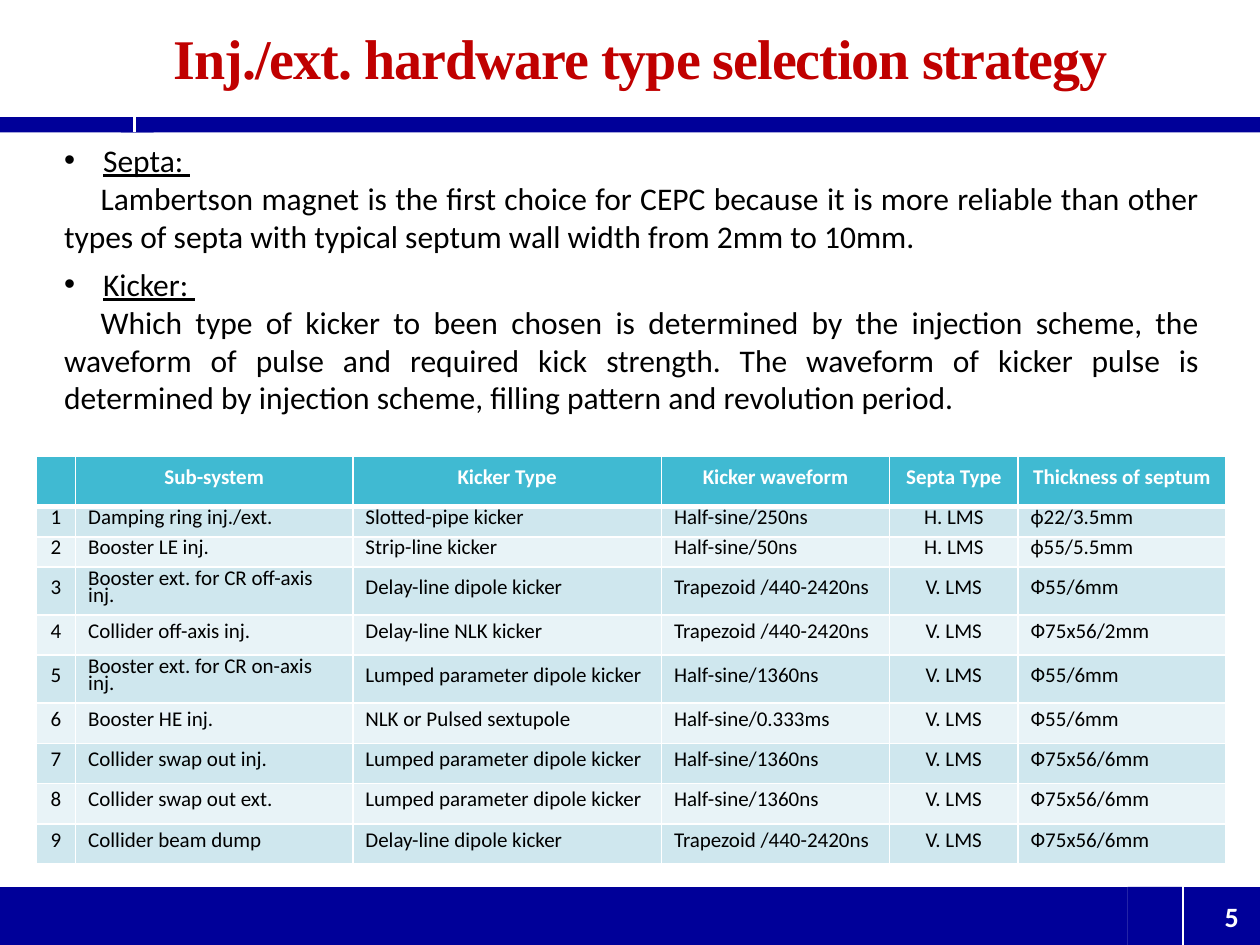
import pptx
import pptx.dml.color
import pptx.enum.shapes
import pptx.enum.text
import pptx.oxml
import pptx.oxml.ns
import pptx.util
from pptx.util import Inches

COLORS = {"navy": "000099", "white": "FFFFFF", "red": "C00000", "black": "000000",
          "header": "40BAD2", "odd": "CFE7EE", "even": "E8F3F7"}
ALIGN = pptx.enum.text.PP_ALIGN
ANCHOR = pptx.enum.text.MSO_ANCHOR
SHAPE = pptx.enum.shapes.MSO_SHAPE
TITLE_FONT = {"name": "Times New Roman", "size": pptx.util.Pt(32), "bold": True}
NUMBER_FONT = {"name": "Calibri", "size": pptx.util.Pt(16), "bold": True}
BODY_FONT = {"name": "Calibri", "size": pptx.util.Pt(18)}
TABLE_FONT = {"name": "Calibri", "size": pptx.util.Pt(12)}

BODY = [
    ("Septa: ", "Lambertson magnet is the first choice for CEPC because it is more reliable "
     "than other types of septa with typical septum wall width from 2mm to 10mm."),
    ("Kicker: ", "Which type of kicker to been chosen is determined by the injection scheme, "
     "the waveform of pulse and required kick strength. The waveform of kicker pulse is "
     "determined by injection scheme, filling pattern and revolution period."),
]
COLUMN_WIDTHS = [0.31, 2.2, 2.45, 1.81, 1.02, 1.65]
ROW_HEIGHTS = [0.36, 0.24, 0.24, 0.38, 0.32, 0.38, 0.32, 0.32, 0.32, 0.32]
CENTERED_COLUMNS = (0, 4)
HEADINGS = ["", "Sub-system", "Kicker Type", "Kicker waveform", "Septa Type",
            "Thickness of septum"]
SYSTEMS = [
    ("Damping ring inj./ext.", "Slotted-pipe kicker", "Half-sine/250ns", "H. LMS", "ф22/3.5mm"),
    ("Booster LE inj.", "Strip-line kicker", "Half-sine/50ns", "H. LMS", "ф55/5.5mm"),
    ("Booster ext. for CR off-axis inj.", "Delay-line dipole kicker", "Trapezoid /440-2420ns",
     "V. LMS", "Ф55/6mm"),
    ("Collider off-axis inj.", "Delay-line NLK kicker", "Trapezoid /440-2420ns", "V. LMS",
     "Ф75x56/2mm"),
    ("Booster ext. for CR on-axis inj.", "Lumped parameter dipole kicker", "Half-sine/1360ns",
     "V. LMS", "Ф55/6mm"),
    ("Booster HE inj.", "NLK or Pulsed sextupole", "Half-sine/0.333ms", "V. LMS", "Ф55/6mm"),
    ("Collider swap out inj.", "Lumped parameter dipole kicker", "Half-sine/1360ns", "V. LMS",
     "Ф75x56/6mm"),
    ("Collider swap out ext.", "Lumped parameter dipole kicker", "Half-sine/1360ns", "V. LMS",
     "Ф75x56/6mm"),
    ("Collider beam dump", "Delay-line dipole kicker", "Trapezoid /440-2420ns", "V. LMS",
     "Ф75x56/6mm"),
]


def rgb(color):
    """Return the named colour."""
    return pptx.dml.color.RGBColor.from_string(COLORS[color])


def set_values(target, values):
    """Set each attribute of the target from a dict."""
    for name, value in values.items():
        setattr(target, name, value)


def write(paragraph, text, font, color, **layout):
    """Write one formatted run into a paragraph and return the run."""
    set_values(paragraph, layout)
    run = paragraph.add_run()
    run.text = text
    set_values(run.font, font)
    run.font.color.rgb = rgb(color)
    return run


def add_text_frame(slide, box, anchor):
    """Add a wrapping text box and return its frame."""
    frame = slide.shapes.add_textbox(*map(Inches, box)).text_frame
    set_values(frame, {"word_wrap": True, "vertical_anchor": anchor})
    return frame


def add_block(slide, kind, box):
    """Add a plain navy shape."""
    shape = slide.shapes.add_shape(kind, *map(Inches, box))
    shape.shadow.inherit = False
    shape.fill.solid()
    shape.fill.fore_color.rgb = rgb("navy")
    shape.line.fill.background()
    return shape


def add_divider(slide, x, top, bottom):
    """Add a vertical white line."""
    line = slide.shapes.add_connector(pptx.enum.shapes.MSO_CONNECTOR.STRAIGHT,
                                      *map(Inches, (x, top, x, bottom)))
    line.line.color.rgb = rgb("white")
    line.line.width = pptx.util.Pt(1.5)
    line._element.spPr.append(pptx.oxml.parse_xml(
        f'<a:effectLst {pptx.oxml.ns.nsdecls("a")}/>'))


def add_header_band(slide, left, top, width, height):
    """Draw the band below the title."""
    split = left + 1.07
    add_block(slide, SHAPE.RECTANGLE, (left + 0.96, top, width - 0.96, height))
    add_block(slide, SHAPE.RIGHT_TRIANGLE, (split, top, 0.15, height))
    add_block(slide, SHAPE.RECTANGLE, (left, top, split - left, height))
    add_divider(slide, split, top - 0.03, top + height)


def add_footer(slide, left, top, width, height):
    """Draw the footer band with the slide number."""
    split = left + width - 1.05
    add_block(slide, SHAPE.RECTANGLE, (left, top, split - left, height))
    add_block(slide, SHAPE.RECTANGLE, (split, top, 1.05, height))
    triangle = add_block(slide, SHAPE.RIGHT_TRIANGLE, (split, top, 0.43, height))
    triangle._element.spPr.xfrm.set("flipV", "1")
    add_divider(slide, split + 0.44, top, top + height)
    frame = add_text_frame(slide, (left + width - 1.54, top, 1.47, height), ANCHOR.MIDDLE)
    write(frame.paragraphs[0], "5", NUMBER_FONT, "white", alignment=ALIGN.RIGHT)


def add_title(slide, *box):
    """Write the slide title."""
    frame = add_text_frame(slide, box, ANCHOR.MIDDLE)
    run = write(frame.paragraphs[0], "Inj./ext. hardware type selection strategy",
                TITLE_FONT, "red", line_spacing=0.9)
    run.font._element.set("spc", "-60")


def set_indent(paragraph, margin, indent, bullet=None):
    """Set the indents and an optional bullet of a paragraph."""
    properties = paragraph._p.get_or_add_pPr()
    properties.set("marL", str(Inches(margin)))
    properties.set("indent", str(Inches(indent)))
    if bullet:
        namespace = pptx.oxml.ns.nsdecls("a")
        for xml in (f'<a:buFont {namespace} typeface="Arial"/>',
                    f'<a:buChar {namespace} char="{bullet}"/>'):
            properties.append(pptx.oxml.parse_xml(xml))


def add_body(slide, *box):
    """Write the underlined topics with their explanations."""
    frame = add_text_frame(slide, box, ANCHOR.TOP)
    for index, (topic, explanation) in enumerate(BODY):
        paragraph = frame.add_paragraph() if index else frame.paragraphs[0]
        set_indent(paragraph, 0.31, -0.31, "•")
        write(paragraph, topic, BODY_FONT | {"underline": True}, "black",
              space_before=pptx.util.Pt(6 if index else 0))
        paragraph = frame.add_paragraph()
        set_indent(paragraph, 0, 0.29)
        write(paragraph, explanation, BODY_FONT, "black", alignment=ALIGN.JUSTIFY)


def set_borders(cell, row):
    """Give a cell white borders, thicker below the heading row."""
    widths = {"L": 1, "R": 1, "T": 3 if row == 1 else 1, "B": 1 if row else 3}
    for side, width in widths.items():
        cell._tc.get_or_add_tcPr().append(pptx.oxml.parse_xml(
            f'<a:ln{side} {pptx.oxml.ns.nsdecls("a")} w="{pptx.util.Pt(width)}"><a:solidFill>'
            f'<a:srgbClr val="{COLORS["white"]}"/></a:solidFill></a:ln{side}>'))


def add_system_table(slide, left, top, width, height):
    """Add the table of kickers and septa by sub-system."""
    rows = [HEADINGS] + [(str(number), *system) for number, system in enumerate(SYSTEMS, 1)]
    table = slide.shapes.add_table(len(rows), len(HEADINGS),
                                   *map(Inches, (left, top, width, height))).table
    for column, column_width in zip(table.columns, COLUMN_WIDTHS):
        column.width = Inches(column_width)
    for row, row_height in zip(table.rows, ROW_HEIGHTS):
        row.height = Inches(row_height)
    for row, texts in enumerate(rows):
        fill = ("odd" if row % 2 else "even") if row else "header"
        for column, text in enumerate(texts):
            cell = table.cell(row, column)
            cell.vertical_anchor = ANCHOR.MIDDLE
            set_borders(cell, row)
            cell.fill.solid()
            cell.fill.fore_color.rgb = rgb(fill)
            centered = row == 0 or column in CENTERED_COLUMNS
            write(cell.text_frame.paragraphs[0], text, TABLE_FONT | {"bold": row == 0},
                  "black" if row else "white", line_spacing=pptx.util.Pt(10),
                  alignment=ALIGN.CENTER if centered else ALIGN.LEFT)


def main():
    """Build the slide and save it."""
    presentation = pptx.Presentation()
    set_values(presentation, {"slide_width": Inches(10), "slide_height": Inches(7.5)})
    slide = presentation.slides.add_slide(presentation.slide_layouts[6])
    add_header_band(slide, 0, 0.93, 10, 0.12)
    add_footer(slide, 0, 7.04, 10, 0.46)
    add_title(slide, 1.28, 0.12, 8.62, 0.73)
    add_system_table(slide, 0.29, 3.62, sum(COLUMN_WIDTHS), sum(ROW_HEIGHTS))
    add_body(slide, 0.41, 1.07, 9.21, 2.31)
    presentation.save("out.pptx")


if __name__ == "__main__":
    main()
